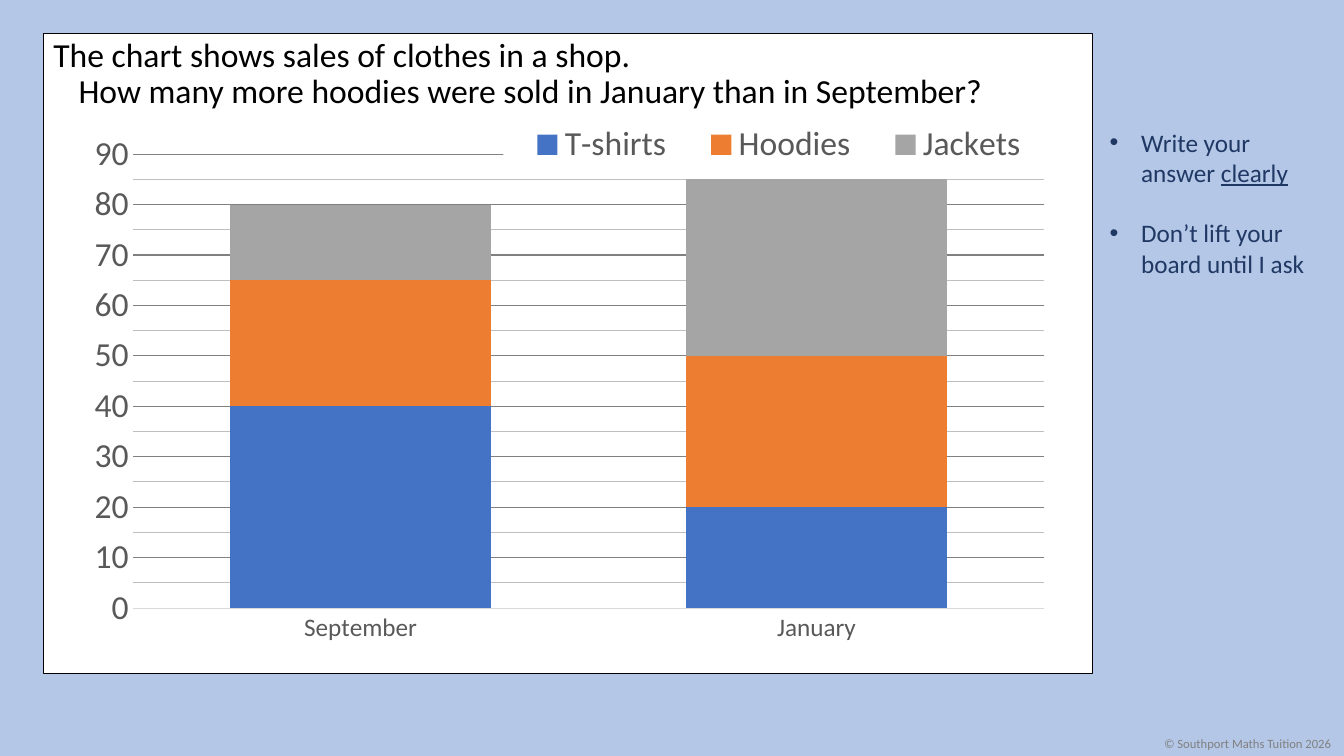
from lxml.etree import SubElement
from pptx import Presentation
from pptx.chart.data import CategoryChartData
from pptx.dml.color import RGBColor
from pptx.enum.chart import XL_CHART_TYPE as ChartType, XL_LEGEND_POSITION as LegendPosition
from pptx.enum.chart import XL_TICK_MARK as TickMark
from pptx.enum.shapes import MSO_SHAPE as Shape
from pptx.oxml import parse_xml
from pptx.oxml.ns import nsdecls, qn
from pptx.util import Pt

PANEL = (31, 24, 749.5, 457.2)
PLOT_LAYOUT = (0.074, 0.067, 0.91, 0.816)
LEGEND_LAYOUT = (0.444, 0.01, 0.55, 0.08)
MONTHS = ("September", "January")
SALES = (
    ("T-shirts", (40, 20), "4472C4"),
    ("Hoodies", (25, 30), "ED7D31"),
    ("Jackets", (15, 35), "A5A5A5"),
)


def color(value):
    return RGBColor.from_string(value)


def format_font(font, size, ink, underline=None):
    font.name = "Calibri"
    font.size = Pt(size)
    font.color.rgb = color(ink)
    font.underline = underline


def write(paragraph, text, *, size, ink, underline=None, indent=0, bullet=None,
          before=0, spacing=None):
    if indent:
        properties = paragraph._p.get_or_add_pPr()
        properties.set("marL", str(Pt(indent)))
        properties.set("indent", str(-Pt(indent)))
        if bullet:
            SubElement(properties, qn("a:buFont")).set("typeface", "Arial")
            SubElement(properties, qn("a:buChar")).set("char", bullet)
    if before:
        paragraph.space_before = Pt(before)
    if spacing:
        paragraph.line_spacing = spacing
    for number, line in enumerate(text.splitlines()):
        if number:
            paragraph.add_line_break()
        run = paragraph.add_run()
        run.text = line
        format_font(run.font, size, ink, underline)


def style_line(line, ink, width=0.75):
    line.color.rgb = color(ink)
    line.width = Pt(width)


def shape_properties(content):
    return parse_xml(f"<c:spPr {nsdecls('c', 'a')}>{content}</c:spPr>")


def solid_fill(ink):
    return f'<a:solidFill><a:srgbClr val="{color(ink)}"/></a:solidFill>'


def place(element, index, box, inner=False):
    for old in element.findall(qn("c:layout")):
        element.remove(old)
    layout = parse_xml(f"<c:layout {nsdecls('c')}><c:manualLayout/></c:layout>")
    manual = layout[0]
    settings = [("layoutTarget", "inner")] if inner else []
    settings += [("xMode", "edge"), ("yMode", "edge"), *zip("xywh", box)]
    for tag, value in settings:
        SubElement(manual, qn(f"c:{tag}")).set("val", str(value))
    element.insert(index, layout)


class QuizSlide:
    navy = "203864"
    gray = "595959"

    def __init__(self, deck, background):
        self.slide = deck.slides.add_slide(deck.slide_layouts[6])
        fill = self.slide.background.fill
        fill.solid()
        fill.fore_color.rgb = color(background)

    def panel(self, box):
        panel = self.slide.shapes.add_shape(Shape.RECTANGLE, *map(Pt, box))
        panel.shadow.inherit = False
        panel.fill.solid()
        panel.fill.fore_color.rgb = color("FFFFFF")
        style_line(panel.line, "000000", 1)

    def text(self, box, wrap=True):
        frame = self.slide.shapes.add_textbox(*map(Pt, box)).text_frame
        frame.word_wrap = wrap
        return frame

    def stacked_chart(self, box, categories, rows):
        data = CategoryChartData()
        data.categories = categories
        for name, values, _ in rows:
            data.add_series(name, values)
        chart = self.slide.shapes.add_chart(
            ChartType.COLUMN_STACKED, *map(Pt, box), data).chart
        chart.has_title = False
        format_font(chart.font, 10, "000000")
        plot = chart.plots[0]
        plot.gap_width, plot.overlap, plot.vary_by_categories = 75, 100, False
        for series, (_, _, ink) in zip(plot.series, rows):
            series.format.fill.solid()
            series.format.fill.fore_color.rgb = color(ink)
        place(plot._element.getparent(), 0, PLOT_LAYOUT, inner=True)
        self.axes(chart)
        self.legend(chart)

    def axes(self, chart):
        months, amounts = chart.category_axis, chart.value_axis
        for axis, size in ((months, 18), (amounts, 24)):
            axis.major_tick_mark = axis.minor_tick_mark = TickMark.NONE
            format_font(axis.tick_labels.font, size, self.gray)
        style_line(months.format.line, "D9D9D9")
        amounts.format.line.fill.background()
        amounts.minimum_scale, amounts.maximum_scale = 0, 90
        amounts.major_unit, amounts.minor_unit = 10, 5
        amounts.has_major_gridlines = amounts.has_minor_gridlines = True
        style_line(amounts.major_gridlines.format.line, "808080")
        minor_gridlines = amounts._element.find(qn("c:minorGridlines"))
        minor_gridlines.append(shape_properties(
            f'<a:ln w="{Pt(0.75)}">{solid_fill("BFBFBF")}</a:ln>'))

    def legend(self, chart):
        chart.has_legend = True
        legend = chart.legend
        legend.position = LegendPosition.BOTTOM
        legend.include_in_layout = False
        format_font(legend.font, 24, self.gray)
        element = legend._element
        place(element, 1, LEGEND_LAYOUT)
        overlay = element.find(qn("c:overlay"))
        overlay.addnext(shape_properties(solid_fill("FFFFFF")))


def main():
    deck = Presentation()
    deck.slide_width, deck.slide_height = Pt(960), Pt(540)
    quiz = QuizSlide(deck, "B4C7E7")
    quiz.panel(PANEL)

    advice = quiz.text((785.5, 87.1, 167, 116.6))
    bullet_style = dict(size=18, ink=quiz.navy)
    clear_answer = advice.paragraphs[0]
    write(clear_answer, "Write your answer ", indent=22.5, bullet="•", **bullet_style)
    write(clear_answer, "clearly", underline=True, **bullet_style)
    write(advice.add_paragraph(), "Don’t lift your board until I ask",
          indent=22.5, bullet="•", before=21.6, **bullet_style)

    copyright_line = quiz.text((824.4, 522, 135.4, 18), wrap=False)
    write(copyright_line.paragraphs[0], "© Southport Maths Tuition 2026",
          size=9, ink="808080")

    question = quiz.text(PANEL)
    write(question.paragraphs[0], """The chart shows sales of clothes in a shop.
How many more hoodies were sold in January than in September?""",
          size=24, ink="000000", indent=18, spacing=0.9)

    quiz.stacked_chart((41.8, 83.5, 715.7, 397.4), MONTHS, SALES)
    deck.save("out.pptx")


if __name__ == "__main__":
    main()
